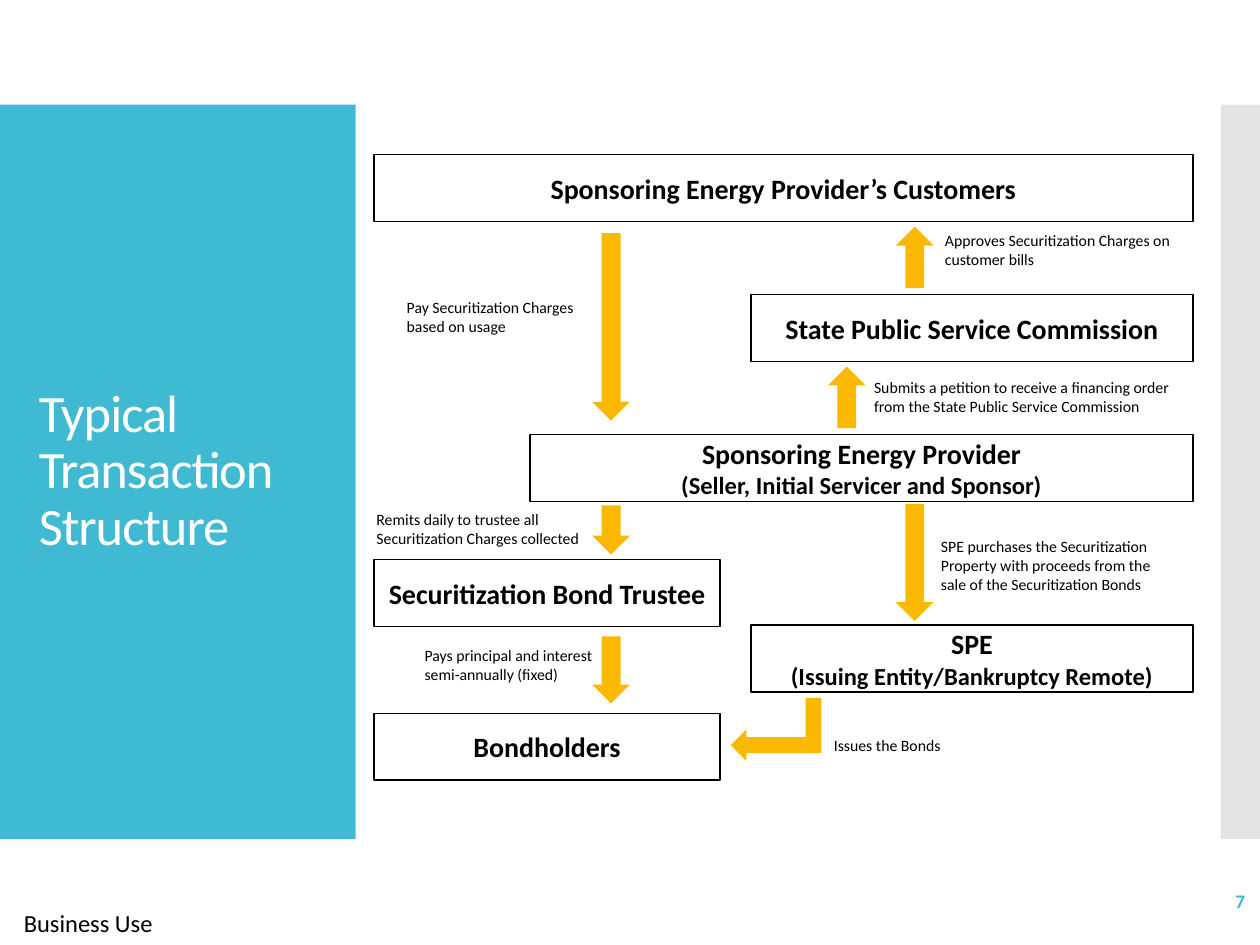
from dataclasses import dataclass

import lxml.etree
import pptx
import pptx.dml.color
import pptx.enum.shapes
import pptx.enum.text
import pptx.oxml.ns
import pptx.util

Cm = pptx.util.Cm
Kind = pptx.enum.shapes.MSO_SHAPE
Align = pptx.enum.text.PP_ALIGN
Anchor = pptx.enum.text.MSO_ANCHOR

FONT = "Calibri"
TEAL, GOLD, GREY = "40BAD2", "FAB900", "C8C8C8"
BLACK, WHITE = "000000", "FFFFFF"

# Shared edges and sizes, in centimetres
LEFT, RIGHT = 7.54, 24.05
SLIM = 6.98
HIGH = 1.35
STEM = 0.76
COL_A, COL_B, COL_C = 11.94, 16.69, 18.06


@dataclass
class Box:
    left: float
    top: float
    right: float
    text: str


@dataclass
class Arrow:
    left: float
    top: float
    high: float
    kind: Kind = Kind.DOWN_ARROW


@dataclass
class Note:
    left: float
    top: float
    wide: float
    high: float
    text: str


BOXES = [
    Box(LEFT, 3.12, RIGHT, "Sponsoring Energy Provider’s Customers"),
    Box(15.14, 5.94, RIGHT, "State Public Service Commission"),
    Box(10.69, 8.76, RIGHT,
        "Sponsoring Energy Provider\n(Seller, Initial Servicer and Sponsor)"),
    Box(15.14, 12.6, RIGHT, "SPE\n(Issuing Entity/Bankruptcy Remote)"),
    Box(LEFT, 11.28, LEFT + SLIM, "Securitization Bond Trustee"),
    Box(LEFT, 14.38, LEFT + SLIM, "Bondholders"),
]

ARROWS = [
    Arrow(COL_A, 4.7, 3.78),
    Arrow(COL_A, 10.19, 0.99),
    Arrow(COL_A, 12.83, 1.35),
    Arrow(COL_C, 10.16, 2.36),
    Arrow(COL_B, 7.39, 1.24, Kind.UP_ARROW),
    Arrow(COL_C, 4.57, 1.24, Kind.UP_ARROW),
]

NOTES = [
    Note(18.8, 4.52, 5.03, 1.02,
         "Approves Securitization Charges on customer bills"),
    Note(17.37, 7.49, 6.88, 1.02,
         "Submits a petition to receive a financing order "
         "from the State Public Service Commission"),
    Note(18.72, 10.69, 5.03, 1.42,
         "SPE purchases the Securitization Property with proceeds "
         "from the sale of the Securitization Bonds"),
    Note(7.95, 5.87, 4.37, 1.02, "Pay Securitization Charges based on usage"),
    Note(7.34, 10.16, 5.03, 1.02,
         "Remits daily to trustee all Securitization Charges collected"),
    Note(8.31, 12.9, 3.99, 1.02,
         "Pays principal and interest semi-annually (fixed)"),
    Note(16.56, 14.71, 5.03, 0.64, "Issues the Bonds"),
]


def color(code: str) -> pptx.dml.color.RGBColor:
    return pptx.dml.color.RGBColor.from_string(code)


def style(par, size: float, code: str, bold=False, align=Align.LEFT) -> None:
    """Format every run of a paragraph."""
    par.alignment = align
    for run in par.runs:
        run.font.name = FONT
        run.font.size = pptx.util.Pt(size)
        run.font.bold = bold
        run.font.color.rgb = color(code)


def shape(slide, kind: Kind, left: float, top: float, wide: float,
          high: float, fill: str):
    """Add a flat preset shape without an outline."""
    item = slide.shapes.add_shape(kind, Cm(left), Cm(top), Cm(wide), Cm(high))
    item.shadow.inherit = False
    item.fill.solid()
    item.fill.fore_color.rgb = color(fill)
    item.line.fill.background()
    return item


def label(slide, note: Note, size: float, code=BLACK, bold=False,
          align=Align.LEFT, anchor=Anchor.TOP):
    """Add a wrapped text box and return its frame."""
    frame = slide.shapes.add_textbox(
        Cm(note.left), Cm(note.top), Cm(note.wide), Cm(note.high)).text_frame
    frame.word_wrap = True
    frame.margin_right = Cm(0.15)
    frame.vertical_anchor = anchor
    frame.text = note.text
    style(frame.paragraphs[0], size, code, bold, align)
    return frame


def draw_box(slide, box: Box) -> None:
    item = shape(slide, Kind.RECTANGLE, box.left, box.top,
                 box.right - box.left, HIGH, WHITE)
    item.line.color.rgb = color(BLACK)
    item.line.width = pptx.util.Pt(0.85)
    frame = item.text_frame
    frame.vertical_anchor = Anchor.MIDDLE
    frame.text = box.text
    for row, par in enumerate(frame.paragraphs):
        style(par, 14 if row else 16, BLACK, True, Align.CENTER)


def draw_bent(slide) -> None:
    """Arrow that leaves the SPE downwards and turns left."""
    item = shape(slide, Kind.BENT_UP_ARROW, 15.01, 13.79, 1.27, 1.83, GOLD)
    item.rotation = 90
    item._element.spPr.find(pptx.oxml.ns.qn("a:xfrm")).set("flipV", "1")


def draw_title(slide) -> None:
    title = slide.shapes.title
    title.left, title.top = Cm(0.53), Cm(3.12)
    title.width, title.height = Cm(6.15), Cm(12.78)
    frame = title.text_frame
    frame.text = "Typical Transaction Structure"
    frame.vertical_anchor = Anchor.MIDDLE
    par = frame.paragraphs[0]
    par.line_spacing = 0.9
    style(par, 30, WHITE)
    par.runs[0].font._element.set("spc", "-60")
    # Bring the title in front of the panel
    slide.shapes._spTree.append(title._element)


def draw_frame(slide) -> None:
    """Side panels, title, footer and page number."""
    shape(slide, Kind.RECTANGLE, 0, 2.11, 7.17, 14.81, TEAL)
    strip = shape(slide, Kind.RECTANGLE, 24.61, 2.11, 0.79, 14.81, GREY)
    tint = strip._element.spPr.find(".//" + pptx.oxml.ns.qn("a:srgbClr"))
    lxml.etree.SubElement(tint, pptx.oxml.ns.qn("a:alpha"), val="50000")
    draw_title(slide)
    foot = label(slide, Note(0, 18.14, 3.58, 0.91, "Business Use"), 14,
                 anchor=Anchor.MIDDLE)
    foot.margin_left = Cm(0.48)
    foot.margin_top = foot.margin_bottom = foot.margin_right = 0
    page = label(slide, Note(22.15, 17.65, 3.2, 1.02, "7"), 11, TEAL, True,
                 Align.RIGHT, Anchor.MIDDLE)
    page.margin_right = Cm(0.25)


def main() -> None:
    deck = pptx.Presentation()
    deck.slide_width, deck.slide_height = Cm(25.4), Cm(19.05)
    slide = deck.slides.add_slide(deck.slide_layouts[5])
    draw_frame(slide)
    # Flow chart
    for box in BOXES:
        draw_box(slide, box)
    for arrow in ARROWS:
        shape(slide, arrow.kind, arrow.left, arrow.top, STEM, arrow.high, GOLD)
    draw_bent(slide)
    for note in NOTES:
        label(slide, note, 9)
    deck.save("out.pptx")


if __name__ == "__main__":
    main()
